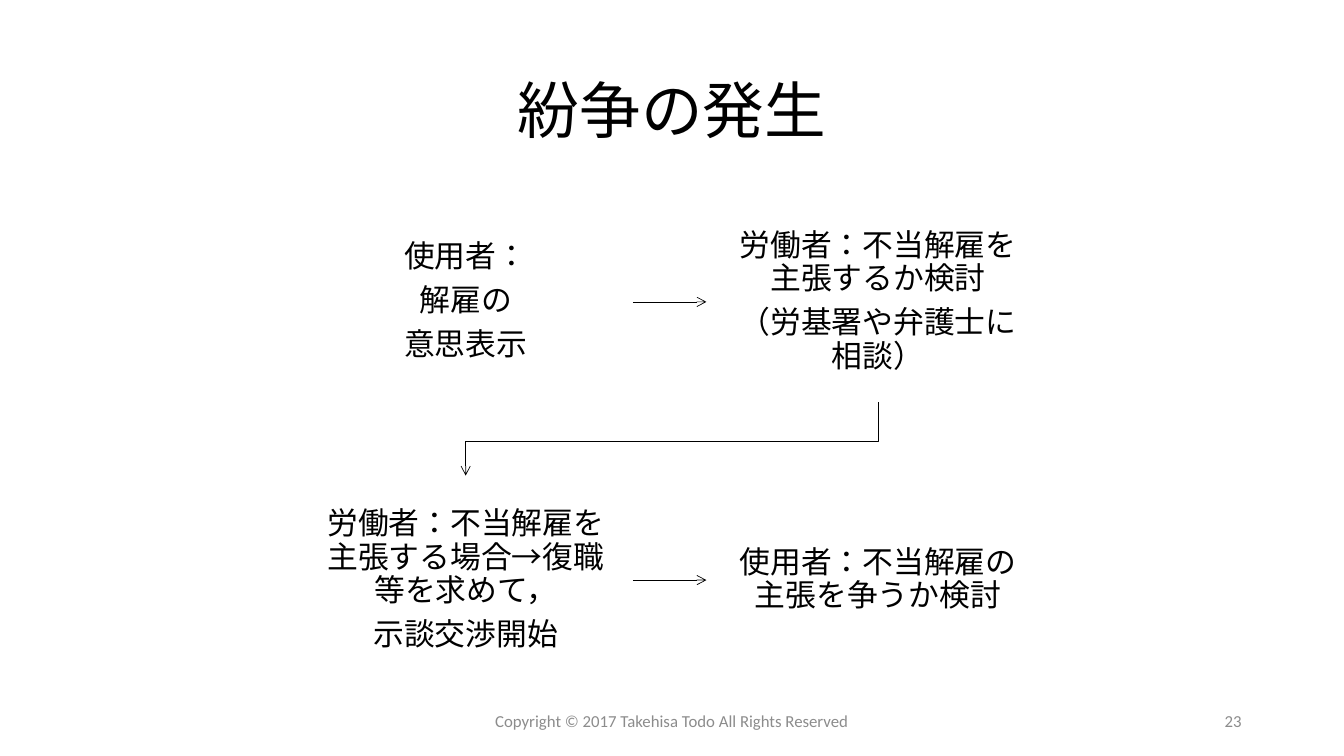
from dataclasses import dataclass

from lxml import etree
from pptx import Presentation
from pptx.dml.color import RGBColor
from pptx.enum.lang import MSO_LANGUAGE_ID
from pptx.enum.shapes import MSO_CONNECTOR
from pptx.enum.text import MSO_ANCHOR, MSO_AUTO_SIZE, PP_ALIGN
from pptx.oxml.ns import qn
from pptx.util import Pt

CENTER, RIGHT = PP_ALIGN.CENTER, PP_ALIGN.RIGHT
MIDDLE = MSO_ANCHOR.MIDDLE
NO_AUTOFIT = MSO_AUTO_SIZE.NONE
STRAIGHT = MSO_CONNECTOR.STRAIGHT
JAPANESE, ENGLISH = MSO_LANGUAGE_ID.JAPANESE, MSO_LANGUAGE_ID.ENGLISH_US

COLORS = {"text": "000000", "line": "000000", "box": "FFFFFF", "footer": "8C8C8C"}
FONT = "Calibri"
TITLE_LAYOUT = 5

# Flow grid, in points
COLUMNS = (213.12, 507.6)
ROWS = (144, 342.72)
BOX_WIDTH, BOX_HEIGHT = 239, 143.28
ARROW_LENGTH = 52.5
BOX_INSET = 12.24
ELBOW_DROP, ELBOW_GAP = 28, 3


@dataclass(frozen=True)
class TextStyle:
    size: float
    color: str = "text"
    alignment: PP_ALIGN = CENTER
    line_spacing: float = 0.9
    space_after: float = 0
    inset_x: float = 7.2
    inset_y: float = 3.6
    language: MSO_LANGUAGE_ID = JAPANESE


@dataclass(frozen=True)
class Step:
    column: int
    row: int
    lines: tuple[str, ...]


@dataclass(frozen=True)
class Footer:
    left: float
    width: float
    text: str
    alignment: PP_ALIGN


TITLE_STYLE = TextStyle(44)
STEP_STYLE = TextStyle(22, space_after=7.7, inset_x=BOX_INSET, inset_y=BOX_INSET)

STEPS = (
    Step(0, 0, ("使用者：", "解雇の", "意思表示")),
    Step(1, 0, ("労働者：不当解雇を主張するか検討", "（労基署や弁護士に相談）")),
    Step(0, 1, ("労働者：不当解雇を主張する場合→復職等を求めて，", "示談交渉開始")),
    Step(1, 1, ("使用者：不当解雇の主張を争うか検討",)),
)
FOOTERS = (
    Footer(678, 216, "23", RIGHT),
    Footer(318, 324, "Copyright © 2017 Takehisa Todo All Rights Reserved", CENTER),
)


def set_attributes(target, values: dict) -> None:
    for name, value in values.items():
        setattr(target, name, value)


def write_text(shape, lines: tuple[str, ...], style: TextStyle) -> None:
    frame = shape.text_frame
    set_attributes(frame, {
        "text": "\n".join(lines),
        "word_wrap": True,
        "auto_size": NO_AUTOFIT,
        "vertical_anchor": MIDDLE,
        "margin_left": Pt(style.inset_x),
        "margin_right": Pt(style.inset_x),
        "margin_top": Pt(style.inset_y),
        "margin_bottom": Pt(style.inset_y),
    })
    for paragraph in frame.paragraphs:
        set_attributes(paragraph, {
            "alignment": style.alignment,
            "line_spacing": style.line_spacing,
            "space_before": Pt(0),
            "space_after": Pt(style.space_after),
        })
        for run in paragraph.runs:
            set_attributes(run.font, {
                "name": FONT, "size": Pt(style.size), "language_id": style.language,
            })
            run.font.color.rgb = RGBColor.from_string(COLORS[style.color])


def style_arrow(shape) -> None:
    shape.line.width = Pt(0.5)
    shape.line.color.rgb = RGBColor.from_string(COLORS["line"])
    line = shape.line._get_or_add_ln()
    etree.SubElement(line, qn("a:tailEnd"), type="arrow")
    etree.SubElement(shape._element.spPr, qn("a:effectLst"))


def add_row_arrow(slide, row: int) -> None:
    start = COLUMNS[0] + BOX_WIDTH
    middle = ROWS[row] + BOX_HEIGHT / 2
    arrow = slide.shapes.add_connector(
        STRAIGHT, Pt(start), Pt(middle), Pt(start + ARROW_LENGTH), Pt(middle))
    style_arrow(arrow)


def add_return_arrow(slide) -> None:
    left, right = (column + BOX_WIDTH / 2 for column in COLUMNS)
    top = ROWS[0] + BOX_HEIGHT
    bend = top + ELBOW_DROP
    builder = slide.shapes.build_freeform(Pt(right), Pt(top))
    corners = ((right, bend), (left, bend), (left, ROWS[1] - ELBOW_GAP))
    builder.add_line_segments([(Pt(x), Pt(y)) for x, y in corners], close=False)
    arrow = builder.convert_to_shape()
    arrow.fill.background()
    style_arrow(arrow)


def add_step(slide, step: Step) -> None:
    box = slide.shapes.add_textbox(
        Pt(COLUMNS[step.column]), Pt(ROWS[step.row]), Pt(BOX_WIDTH), Pt(BOX_HEIGHT))
    box.fill.solid()
    box.fill.fore_color.rgb = RGBColor.from_string(COLORS["box"])
    write_text(box, step.lines, STEP_STYLE)


def add_footer(slide, footer: Footer) -> None:
    box = slide.shapes.add_textbox(Pt(footer.left), Pt(500.5), Pt(footer.width), Pt(28.75))
    style = TextStyle(12, "footer", footer.alignment, line_spacing=1.0, language=ENGLISH)
    write_text(box, (footer.text,), style)


def main() -> None:
    presentation = Presentation()
    set_attributes(presentation, {"slide_width": Pt(960), "slide_height": Pt(540)})
    slide = presentation.slides.add_slide(presentation.slide_layouts[TITLE_LAYOUT])

    # Title
    title = slide.shapes.title
    set_attributes(title, {
        "left": Pt(66), "top": Pt(28.75), "width": Pt(828), "height": Pt(104.4),
    })
    write_text(title, ("紛争の発生",), TITLE_STYLE)

    # Flow of the dispute
    for step in STEPS:
        add_step(slide, step)
    for row in range(len(ROWS)):
        add_row_arrow(slide, row)
    add_return_arrow(slide)

    # Page number and copyright
    for footer in FOOTERS:
        add_footer(slide, footer)

    presentation.save("out.pptx")


if __name__ == "__main__":
    main()
